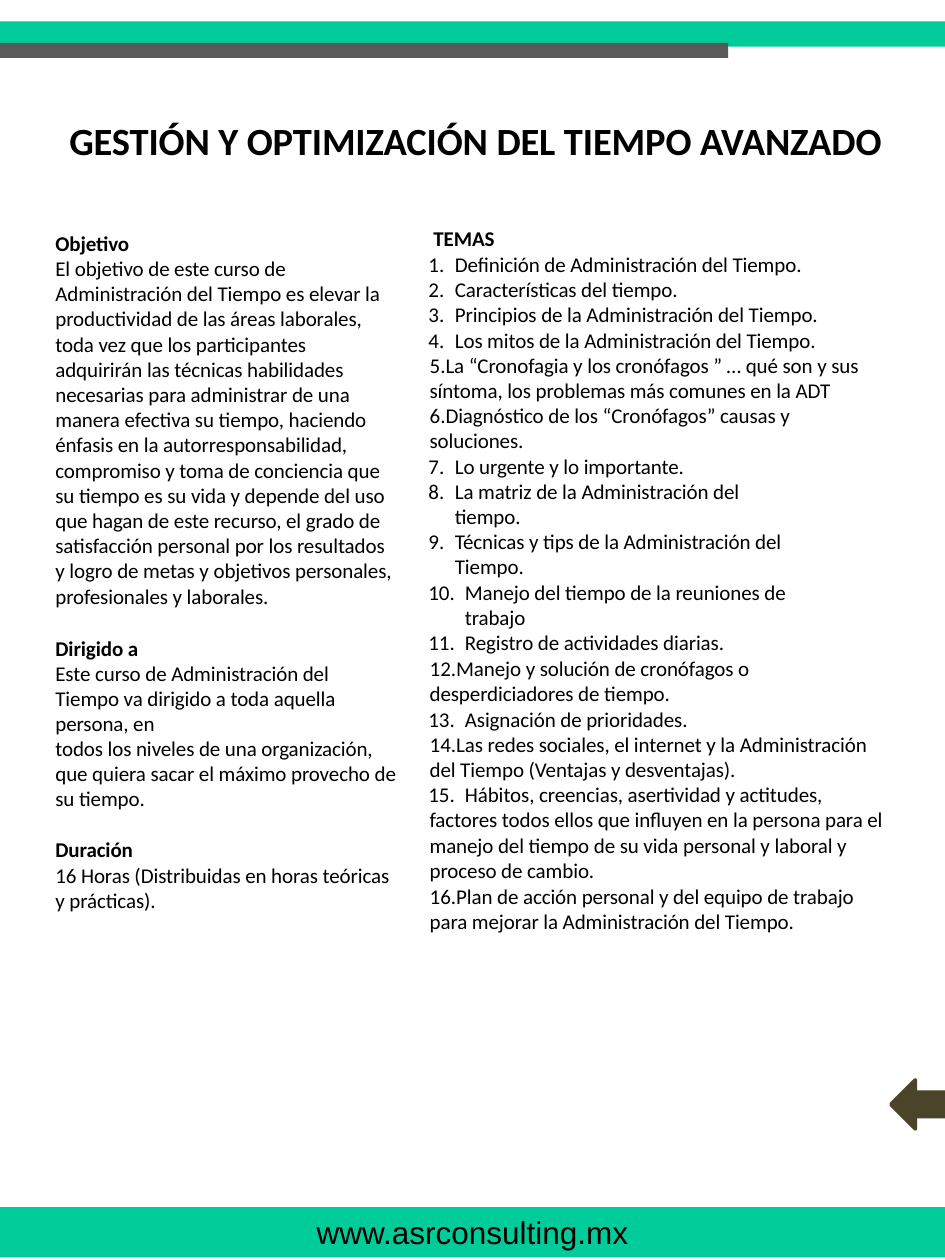
from dataclasses import dataclass
from lxml import etree
from pptx import Presentation
from pptx import util as u
from pptx.dml import color
from pptx.enum import shapes, text
from pptx.oxml import ns


@dataclass(frozen=True)
class Theme:
    green: str = "00CC99"
    gray: str = "595959"
    brown: str = "4A452A"
    ink: str = "000000"
    face: str = "Calibri"
    web: str = "Arial"
    head: float = 22
    body: float = 12
    foot: float = 18
    track: int = -5


@dataclass(frozen=True)
class Box:
    x: float
    y: float
    w: float
    h: float


@dataclass(frozen=True)
class Para:
    words: str
    bold: bool = False
    before: float = 0
    lead: float | None = 14.3
    left: float = 0.01
    hang: float = 0
    right: float = 0
    start: int = 0
    tab: float = 0


T = Theme()
SHAPE = shapes.MSO_SHAPE


def rgb(code: str) -> color.RGBColor:
    return color.RGBColor.from_string(code)


def place(box: Box) -> list[int]:
    return [u.Inches(n) for n in (box.x, box.y, box.w, box.h)]


def block(slide, kind, box: Box, fill: str):
    shape = slide.shapes.add_shape(kind, *place(box))
    shape.shadow.inherit = False
    shape.fill.solid()
    shape.fill.fore_color.rgb = rgb(fill)
    shape.line.fill.background()
    return shape


def number(props, item: Para) -> None:
    mark = etree.SubElement(props, ns.qn("a:buAutoNum"), type="arabicPeriod")
    if item.start > 1:
        mark.set("startAt", str(item.start))
    tabs = etree.SubElement(props, ns.qn("a:tabLst"))
    etree.SubElement(tabs, ns.qn("a:tab"), pos=str(u.Inches(item.tab)), algn="l")


def style(para, face: str, size: float, bold: bool = False) -> None:
    font = para.font
    font.name, font.size, font.bold = face, u.Pt(size), bold
    font.color.rgb = rgb(T.ink)


def write(slide, box: Box, items: list[Para], size: float) -> None:
    frame = slide.shapes.add_textbox(*place(box)).text_frame
    frame.word_wrap = True
    frame.margin_left = frame.margin_right = frame.margin_bottom = 0
    frame.margin_top = u.Inches(0.01)
    for i, item in enumerate(items):
        para = frame.paragraphs[0] if i == 0 else frame.add_paragraph()
        run = para.add_run()
        run.text = item.words
        run._r.get_or_add_rPr().set("spc", str(T.track))
        props = para._p.get_or_add_pPr()
        props.set("marL", str(u.Inches(item.left)))
        props.set("marR", str(u.Inches(item.right)))
        props.set("indent", str(u.Inches(-item.hang)))
        if item.tab:
            number(props, item)
        para.space_before = u.Pt(item.before)
        para.line_spacing = u.Pt(item.lead) if item.lead else 1.0
        style(para, T.face, size, item.bold)


def topic(words: str, right: float = 0, before: float = 0, flat: bool = False,
          wide: bool = False, start: int = 0) -> Para:
    tab = 0.3 if wide else 0.22
    return Para(words, before=before, lead=None, left=0.02 if flat else tab,
                hang=0 if flat else tab - 0.01, right=right, start=start, tab=tab)


TITLE = [Para("GESTIÓN Y OPTIMIZACIÓN DEL TIEMPO AVANZADO", bold=True, lead=None)]

ABOUT = [
    Para("Objetivo", bold=True),
    Para("El objetivo de este curso de Administración del Tiempo es elevar la "
         "productividad de las áreas laborales, toda vez que los participantes "
         "adquirirán las técnicas habilidades necesarias para administrar de una "
         "manera efectiva su tiempo, haciendo énfasis en la autorresponsabilidad, "
         "compromiso y toma de conciencia que su tiempo es su vida y depende del uso "
         "que hagan de este recurso, el grado de satisfacción personal por los "
         "resultados y logro de metas y objetivos personales, profesionales y "
         "laborales.", lead=None, right=0.06),
    Para("Dirigido a", bold=True, before=15.5),
    Para("Este curso de Administración del Tiempo va dirigido a toda aquella "
         "persona, en", before=0.4, right=0.1),
    Para("todos los niveles de una organización, que quiera sacar el máximo "
         "provecho de"),
    Para("su tiempo."),
    Para("Duración", bold=True, before=14.6),
    Para("16 Horas (Distribuidas en horas teóricas y prácticas).", before=0.3),
]

TOPICS = [
    Para("TEMAS", bold=True, lead=None, left=0.05),
    topic("Definición de Administración del Tiempo.", before=0.5),
    topic("Características del tiempo."),
    topic("Principios de la Administración del Tiempo."),
    topic("Los mitos de la Administración del Tiempo."),
    topic("La “Cronofagia y los cronófagos ” … qué son y sus síntoma, los problemas "
          "más comunes en la ADT", flat=True),
    topic("Diagnóstico de los “Cronófagos” causas y soluciones.", 0.3, flat=True),
    topic("Lo urgente y lo importante."),
    topic("La matriz de la Administración del tiempo.", 1),
    topic("Técnicas y tips de la Administración del Tiempo.", 0.6),
    topic("Manejo del tiempo de la reuniones de trabajo", 0.6, wide=True),
    topic("Registro de actividades diarias.", wide=True),
    topic("Manejo y solución de cronófagos o desperdiciadores de tiempo.", 0.5, 0.5,
          flat=True, wide=True),
    topic("Asignación de prioridades.", wide=True),
    topic("Las redes sociales, el internet y la Administración del Tiempo (Ventajas "
          "y desventajas).", flat=True, wide=True),
    topic("Hábitos, creencias, asertividad y actitudes,", wide=True),
    Para("factores todos ellos que influyen en la persona para el manejo del tiempo "
         "de su vida personal y laboral y proceso de cambio.", lead=None, left=0.02),
    topic("Plan de acción personal y del equipo de trabajo para mejorar la "
          "Administración del Tiempo.", before=0.7, flat=True, wide=True, start=16),
]


def main() -> None:
    deck = Presentation()
    deck.slide_width, deck.slide_height = u.Inches(7.5), u.Inches(10)
    slide = deck.slides.add_slide(deck.slide_layouts[6])

    write(slide, Box(0.54, 0.92, 6.56, 0.39), TITLE, T.head)
    write(slide, Box(0.43, 1.82, 2.77, 5.22), ABOUT, T.body)
    write(slide, Box(3.39, 1.78, 3.66, 5.03), TOPICS, T.body)

    foot = block(slide, SHAPE.RECTANGLE, Box(0, 9.58, 7.5, 0.4), T.green)
    para = foot.text_frame.paragraphs[0]
    para.text = "www.asrconsulting.mx"
    para.alignment = text.PP_ALIGN.CENTER
    style(para, T.web, T.foot)

    block(slide, SHAPE.RECTANGLE, Box(0, 0.17, 7.5, 0.2), T.green)
    block(slide, SHAPE.RECTANGLE, Box(0, 0.34, 5.78, 0.12), T.gray)
    arrow = block(slide, SHAPE.LEFT_ARROW, Box(7.07, 8.57, 0.43, 0.39), T.brown)
    arrow.line.color.rgb = rgb(T.brown)
    arrow.line.width = u.Pt(2)

    deck.save("out.pptx")


if __name__ == "__main__":
    main()
